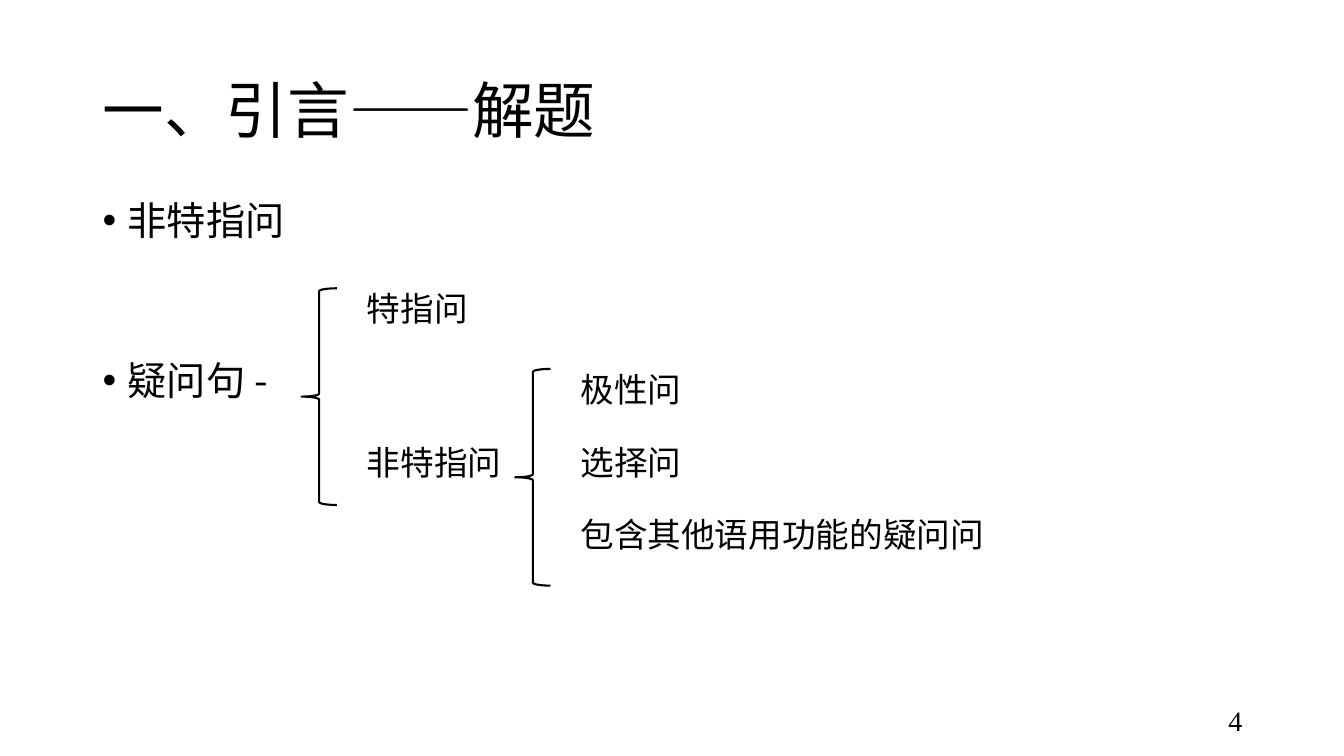
"""Build the slide that classifies interrogative sentences with two braces."""
from pptx import Presentation
from pptx.dml.color import RGBColor
from pptx.enum import shapes, text
from pptx.oxml import ns, xmlchemy
from pptx.util import Inches, Pt

TITLE = "一、引言——解题"
BULLETS = ["非特指问", "疑问句 -"]
GROUPS = [
    {"left": 2.99, "top": 2.86, "width": 1.85, "gap": 80.6,
     "items": ["特指问", "非特指问"]},
    {"left": 5.11, "top": 3.66, "width": 4.41, "gap": 23,
     "items": ["极性问", "选择问", "包含其他语用功能的疑问问"]},
]
PAGE = "4"
THEME = {"ink": RGBColor(0, 0, 0), "cjk": "Noto Sans CJK SC", "latin": "Times New Roman",
         "title": 44, "body": 28, "label": 24, "page": 20, "brace": 1.5}
BRACE_W, BRACE_H, LABEL_H, LABEL_DX = 0.35, 2.15, 2.12, 0.55


def add_child(parent, tag, **attrs):
    el = xmlchemy.OxmlElement(tag)
    for name, value in attrs.items():
        el.set(name, value)
    parent.append(el)


def add_text(s, box, lines, size, font=THEME["cjk"], gap=0, spacing=1.0,
             inset=0.0, anchor=text.MSO_ANCHOR.TOP, align=text.PP_ALIGN.LEFT):
    tf = s.shapes.add_textbox(*map(Inches, box)).text_frame
    tf.word_wrap = True
    tf.vertical_anchor = anchor
    tf.margin_top = tf.margin_bottom = Inches(inset)
    tf.text = "\n".join(lines)
    for i, p in enumerate(tf.paragraphs):
        p.alignment = align
        p.line_spacing = spacing
        p.space_before = Pt(gap if i else 0)
        for r in p.runs:
            r.font.size = Pt(size)
            r.font.name = font
            r.font.color.rgb = THEME["ink"]
            add_child(r._r.get_or_add_rPr(), "a:ea", typeface=font)
    return tf


def add_bullets(tf):
    for p in tf.paragraphs:
        pPr = p._p.get_or_add_pPr()
        pPr.set("marL", str(Inches(0.25)))
        pPr.set("indent", str(Inches(-0.25)))
        add_child(pPr, "a:buFont", typeface="Arial")
        add_child(pPr, "a:buChar", char="•")


def add_group(s, group):
    left, top = group["left"], group["top"]
    sp = s.shapes.add_shape(shapes.MSO_SHAPE.LEFT_BRACE, Inches(left), Inches(top),
                            Inches(BRACE_W), Inches(BRACE_H))
    sp.shadow.inherit = False
    sp.fill.background()
    sp.line.color.rgb = THEME["ink"]
    sp.line.width = Pt(THEME["brace"])
    add_text(s, (left + LABEL_DX, top, group["width"], LABEL_H), group["items"],
             THEME["label"], gap=group["gap"])


def main():
    prs = Presentation()
    prs.slide_width, prs.slide_height = Inches(13.33), Inches(7.5)
    s = prs.slides.add_slide(prs.slide_layouts[6])
    add_text(s, (0.92, 0.4, 11.5, 1.45), [TITLE], THEME["title"], spacing=0.9,
             inset=0.05, anchor=text.MSO_ANCHOR.MIDDLE)
    add_bullets(add_text(s, (0.92, 2, 11.5, 4.76), BULLETS, THEME["body"],
                         gap=84, spacing=0.9))
    add_text(s, (9.42, 6.95, 3, 0.4), [PAGE], THEME["page"], font=THEME["latin"],
             inset=0.05, anchor=text.MSO_ANCHOR.MIDDLE, align=text.PP_ALIGN.RIGHT)
    for group in GROUPS:
        add_group(s, group)
    prs.save("out.pptx")


if __name__ == "__main__":
    main()
